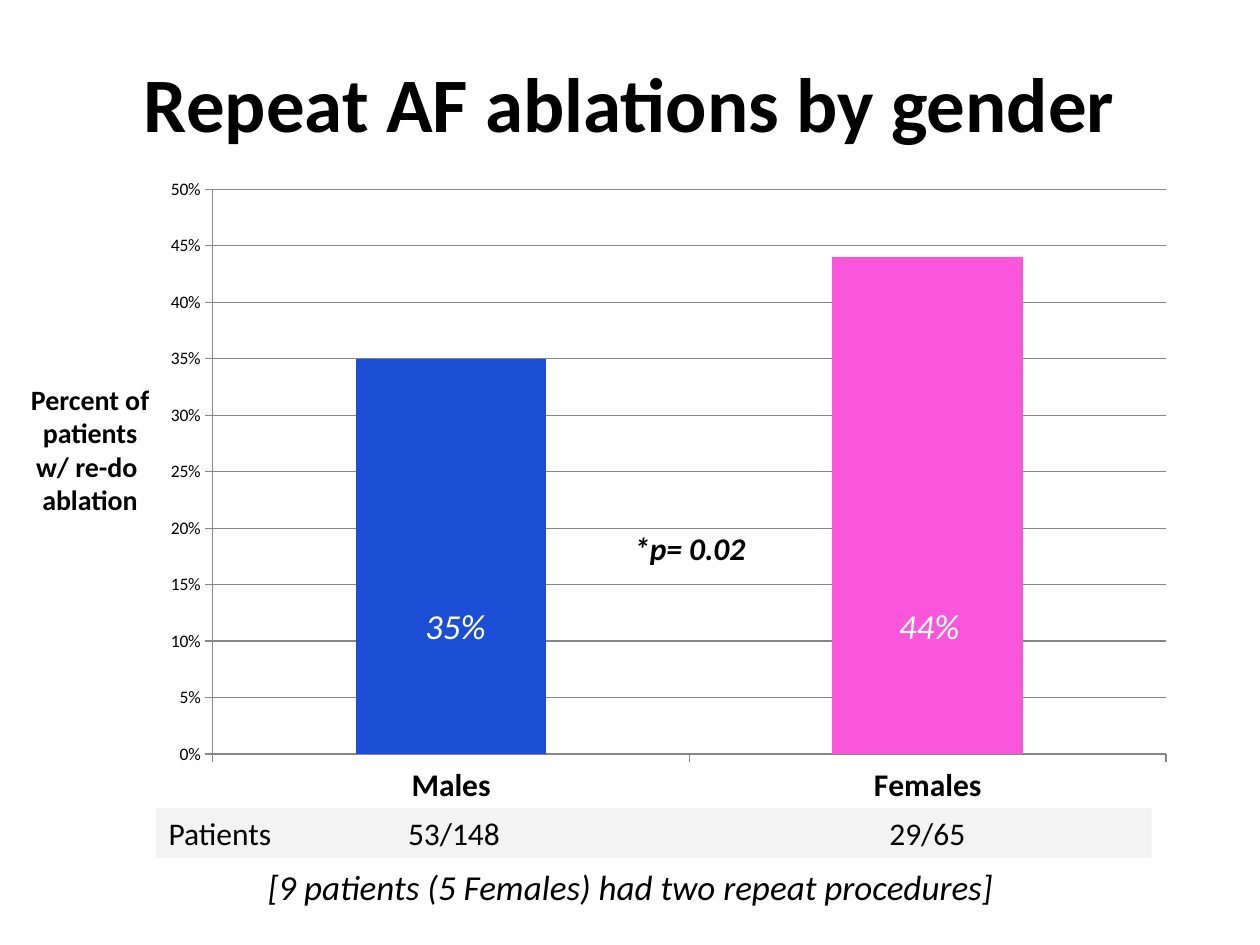
from dataclasses import dataclass

from lxml import etree
from pptx import Presentation
from pptx.chart.data import CategoryChartData
from pptx.dml.color import RGBColor
from pptx.enum.chart import XL_CHART_TYPE, XL_TICK_LABEL_POSITION, XL_TICK_MARK
from pptx.enum.shapes import MSO_SHAPE
from pptx.enum.text import MSO_ANCHOR, PP_ALIGN
from pptx.oxml.ns import qn
from pptx.util import Inches, Pt

COLUMN = XL_CHART_TYPE.COLUMN_CLUSTERED
LOW = XL_TICK_LABEL_POSITION.LOW
OUTSIDE, NO_TICK = XL_TICK_MARK.OUTSIDE, XL_TICK_MARK.NONE
RECTANGLE = MSO_SHAPE.RECTANGLE
MIDDLE = MSO_ANCHOR.MIDDLE
CENTER, LEFT = PP_ALIGN.CENTER, PP_ALIGN.LEFT

FONT = "Calibri"
BLACK, WHITE, GRAY, AXIS_GRAY = "000000", "FFFFFF", "D9D9D9", "868686"
SLIDE_WIDTH, SLIDE_HEIGHT = 10, 7.5
PATIENT_TABS = (1.9, 5.72)  # inches from the text edge of the patient row


@dataclass
class Box:
    """Place as shares of the slide's width and height."""
    left: float
    top: float
    width: float
    height: float

    def lengths(self) -> tuple:
        return (Inches(self.left * SLIDE_WIDTH), Inches(self.top * SLIDE_HEIGHT),
                Inches(self.width * SLIDE_WIDTH), Inches(self.height * SLIDE_HEIGHT))


@dataclass
class Label:
    lines: tuple
    box: Box
    size: int
    bold: bool = False
    italic: bool = False
    color: str = BLACK


@dataclass
class Group:
    name: str
    share: float
    color: str


GROUPS = (Group("Males", 0.35, "1B4DD5"), Group("Females", 0.44, "FA56DB"))
CHART_BOX = Box(0.124, 0.176, 0.802, 0.677)
PATIENT_BOX = Box(0.124, 0.855, 0.79, 0.053)
PLOT_LAYOUT = {"layoutTarget": "inner", "xMode": "edge", "yMode": "edge",
               "x": 0.056, "y": 0.036, "w": 0.944, "h": 0.883}

TITLE = Label(("Repeat AF ablations by gender",), Box(0, 0.04, 1, 0.136), 44, bold=True)
LABELS = (
    Label(("*p= 0.02",), Box(0.441, 0.553, 0.213, 0.053), 18, bold=True, italic=True),
    Label(("44%",), Box(0.668, 0.632, 0.139, 0.059), 20, italic=True, color=WHITE),
    Label(("35%",), Box(0.283, 0.632, 0.157, 0.059), 20, italic=True, color=WHITE),
    Label(("Percent of", "patients w/ re-do ", "ablation"),
          Box(0.013, 0.395, 0.117, 0.161), 16, bold=True),
    Label(("[9 patients (5 Females) had two repeat procedures]",),
          Box(0.115, 0.909, 0.771, 0.059), 20, italic=True),
)


def rgb(color: str) -> RGBColor:
    return RGBColor.from_string(color)


def set_font(font, size: int, bold: bool = False, italic: bool = False,
             color: str = BLACK) -> None:
    font.name, font.size = FONT, Pt(size)
    font.bold, font.italic = bold, italic
    font.color.rgb = rgb(color)


def add_label(slide, label: Label) -> None:
    frame = slide.shapes.add_textbox(*label.box.lengths()).text_frame
    frame.word_wrap = True
    frame.vertical_anchor = MIDDLE
    frame.text = "\n".join(label.lines)
    for paragraph in frame.paragraphs:
        paragraph.alignment = CENTER
        set_font(paragraph.font, label.size, label.bold, label.italic, label.color)


def set_plot_layout(chart) -> None:
    plot_area = chart.plots[0]._element.getparent()
    for old_layout in plot_area.findall(qn("c:layout")):
        plot_area.remove(old_layout)
    layout = etree.Element(qn("c:layout"))
    manual = etree.SubElement(layout, qn("c:manualLayout"))
    for name, value in PLOT_LAYOUT.items():
        etree.SubElement(manual, qn(f"c:{name}")).set("val", str(value))
    plot_area.insert(0, layout)


def add_gender_chart(slide) -> None:
    data = CategoryChartData(number_format="0%")
    data.categories = [group.name for group in GROUPS]
    data.add_series("Series 1", [group.share for group in GROUPS])
    chart = slide.shapes.add_chart(COLUMN, *CHART_BOX.lengths(), data).chart
    chart.has_legend = chart.has_title = False
    set_font(chart.font, 10)
    set_plot_layout(chart)

    # Columns, one colour per gender
    plot = chart.plots[0]
    plot.gap_width = 150
    plot.vary_by_categories = False
    for index, group in enumerate(GROUPS):
        fill = plot.series[0].points[index].format.fill
        fill.solid()
        fill.fore_color.rgb = rgb(group.color)

    # Axes and gridlines
    values, categories = chart.value_axis, chart.category_axis
    values.minimum_scale, values.maximum_scale, values.major_unit = 0, 0.5, 0.05
    values.has_major_gridlines = True
    values.tick_labels.number_format = "0%"
    values.tick_labels.number_format_is_linked = False
    categories.tick_label_position = LOW
    set_font(values.tick_labels.font, 10)
    set_font(categories.tick_labels.font, 18, bold=True)
    for axis in (values, categories):
        axis.major_tick_mark, axis.minor_tick_mark = OUTSIDE, NO_TICK
    for lined in (values, categories, values.major_gridlines):
        lined.format.line.color.rgb = rgb(AXIS_GRAY)
        lined.format.line.width = Pt(0.75)


def add_patient_row(slide) -> None:
    row = slide.shapes.add_shape(RECTANGLE, *PATIENT_BOX.lengths())
    row.shadow.inherit = False
    row.line.fill.background()
    row.fill.solid()
    row.fill.fore_color.rgb = rgb(GRAY)
    fill_color = row._element.spPr.find(qn("a:solidFill"))[0]
    etree.SubElement(fill_color, qn("a:alpha")).set("val", "30000")

    row.text_frame.text = "Patients\t53/148\t29/65"
    row.text_frame.word_wrap = True
    row.text_frame.vertical_anchor = MIDDLE
    paragraph = row.text_frame.paragraphs[0]
    paragraph.alignment = LEFT
    set_font(paragraph.font, 18)
    # Tab stops come before the default run properties
    tab_list = etree.Element(qn("a:tabLst"))
    for position in PATIENT_TABS:
        etree.SubElement(tab_list, qn("a:tab"), pos=str(Inches(position)), algn="l")
    paragraph._p.pPr.insert(0, tab_list)


def main() -> None:
    presentation = Presentation()
    presentation.slide_width = Inches(SLIDE_WIDTH)
    presentation.slide_height = Inches(SLIDE_HEIGHT)
    slide = presentation.slides.add_slide(presentation.slide_layouts[6])

    add_label(slide, TITLE)
    add_gender_chart(slide)
    add_patient_row(slide)
    for label in LABELS:
        add_label(slide, label)
    presentation.save("out.pptx")


if __name__ == "__main__":
    main()
